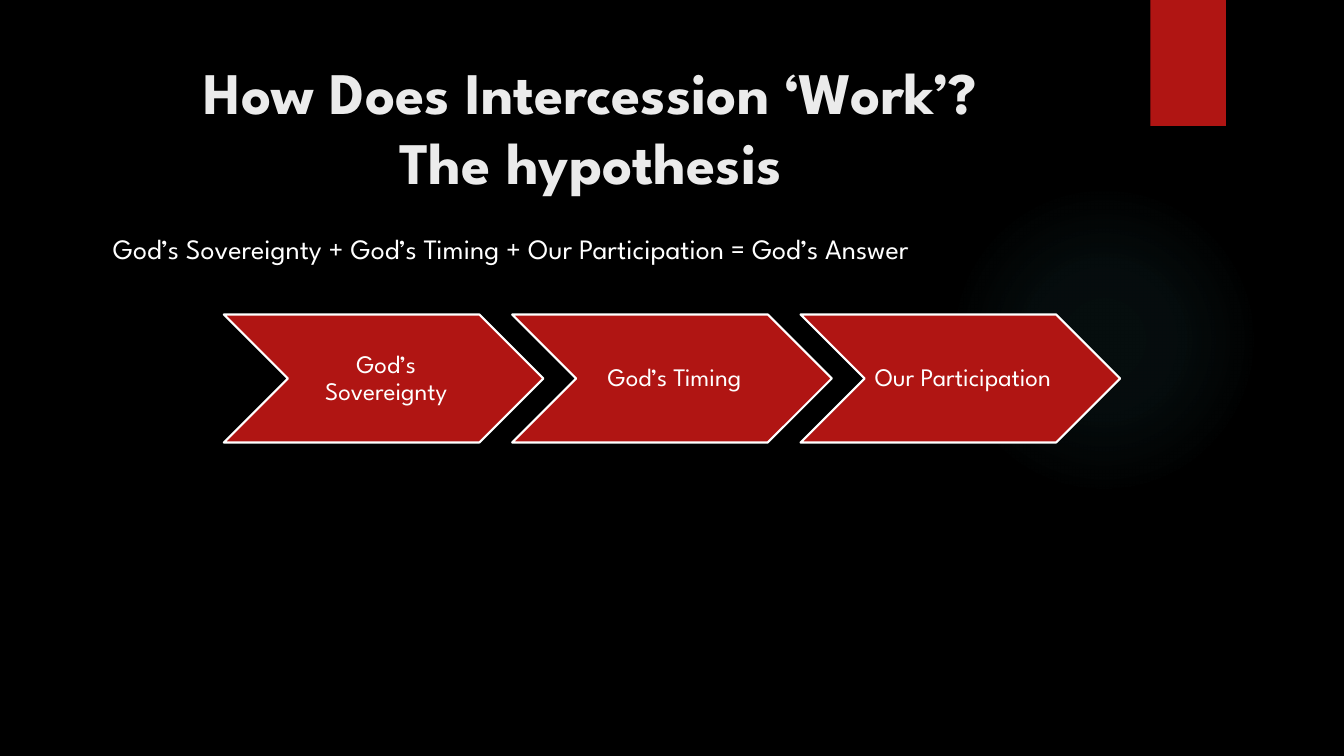
from lxml import etree
from pptx import Presentation
from pptx.dml.color import RGBColor
from pptx.enum.shapes import MSO_SHAPE
from pptx.enum.text import MSO_ANCHOR, MSO_AUTO_SIZE, PP_ALIGN
from pptx.oxml import parse_xml
from pptx.oxml.ns import nsdecls, qn
from pptx.util import Inches, Pt

CHEVRON = MSO_SHAPE.CHEVRON
ELLIPSE = MSO_SHAPE.OVAL
RECTANGLE = MSO_SHAPE.RECTANGLE
MIDDLE = MSO_ANCHOR.MIDDLE
TOP = MSO_ANCHOR.TOP
NO_AUTOFIT = MSO_AUTO_SIZE.NONE
CENTER = PP_ALIGN.CENTER
LEFT = PP_ALIGN.LEFT

FONT = "League Spartan"
RED = "B01513"
WHITE = "FFFFFF"
GLOW = "50B9C1"
GLOW_STOPS = [(0, 7), (36, 6), (69, 0)]
STEPS = ["God’s Sovereignty", "God’s Timing", "Our Participation"]


def color(value):
    return RGBColor.from_string(value)


def paint(fill, value):
    fill.solid()
    fill.fore_color.rgb = color(value)


def remove_bullet(para):
    properties = para._p.get_or_add_pPr()
    properties.set("marL", "0")
    properties.set("indent", "0")
    etree.SubElement(properties, qn("a:buNone"))


def write(shape, text, size, ink, align, anchor, bold=False):
    frame = shape.text_frame
    frame.word_wrap = True
    frame.auto_size = NO_AUTOFIT
    frame.vertical_anchor = anchor
    frame.text = text
    para = frame.paragraphs[0]
    para.alignment = align
    para.space_before = Pt(0)
    remove_bullet(para)
    para.font.name = FONT
    para.font.size = Pt(size)
    para.font.bold = bold
    para.font.color.rgb = color(ink)
    return para


def place(shape, left, top, width, height):
    shape.left, shape.top = Inches(left), Inches(top)
    shape.width, shape.height = Inches(width), Inches(height)


def add_plain_shape(page, kind, left, top, width, height):
    shape = page.shapes.add_shape(
        kind, Inches(left), Inches(top), Inches(width), Inches(height))
    shape.shadow.inherit = False
    shape.line.fill.background()
    return shape


def add_glow(page):
    glow = add_plain_shape(page, ELLIPSE, 9.41, 1.83, 3.08, 3.08)
    stops = "".join(
        f'<a:gs pos="{pos * 1000}"><a:srgbClr val="{GLOW}">'
        f'<a:alpha val="{alpha * 1000}"/></a:srgbClr></a:gs>'
        for pos, alpha in GLOW_STOPS)
    gradient = parse_xml(
        f'<a:gradFill {nsdecls("a")}><a:gsLst>{stops}</a:gsLst>'
        '<a:path path="circle">'
        '<a:fillToRect l="50000" t="50000" r="50000" b="50000"/>'
        '</a:path></a:gradFill>')
    glow._element.spPr.find(qn("a:prstGeom")).addnext(gradient)
    page.shapes._spTree.insert(2, glow._element)


def add_ribbon(page):
    ribbon = add_plain_shape(page, RECTANGLE, 11.41, 0, 0.75, 1.25)
    paint(ribbon.fill, RED)
    effects = ribbon._element.spPr.find(qn("a:effectLst"))
    shadow = etree.SubElement(
        effects, qn("a:outerShdw"), blurRad=str(Pt(3)), dist=str(Pt(2)),
        dir=str(90 * 60000), algn="ctr", rotWithShape="0")
    shade = etree.SubElement(shadow, qn("a:srgbClr"), val="000000")
    etree.SubElement(shade, qn("a:alpha"), val="45000")


def add_step(page, index, text):
    step = add_plain_shape(page, CHEVRON, 2.22 + index * 2.86, 3.12, 3.17, 1.27)
    paint(step.fill, RED)
    paint(step.line.fill, WHITE)
    step.line.width = Pt(1.5)
    frame = step.text_frame
    frame.margin_left = Inches(0.08)
    frame.margin_top = frame.margin_right = frame.margin_bottom = Inches(0.03)
    para = write(step, text, 18, WHITE, CENTER, MIDDLE)
    para.line_spacing = 0.9


def fill_title(page):
    title = page.shapes.title
    place(title, 0.71, 0.5, 10.29, 1.53)
    write(title, "How Does Intercession ‘Work’?\vThe hypothesis",
          42, "EBEBEB", CENTER, TOP, bold=True)


def fill_body(page):
    body = page.placeholders[1]
    place(body, 1.02, 2.25, 9.97, 4.59)
    write(body, "God’s Sovereignty + God’s Timing + Our Participation = God’s Answer",
          20, WHITE, LEFT, TOP)


def main():
    deck = Presentation()
    deck.slide_width, deck.slide_height = Inches(13.33), Inches(7.5)
    page = deck.slides.add_slide(deck.slide_layouts[1])
    paint(page.background.fill, "000000")
    add_glow(page)
    add_ribbon(page)
    fill_title(page)
    fill_body(page)
    for index, text in enumerate(STEPS):
        add_step(page, index, text)
    deck.save("out.pptx")


if __name__ == "__main__":
    main()
